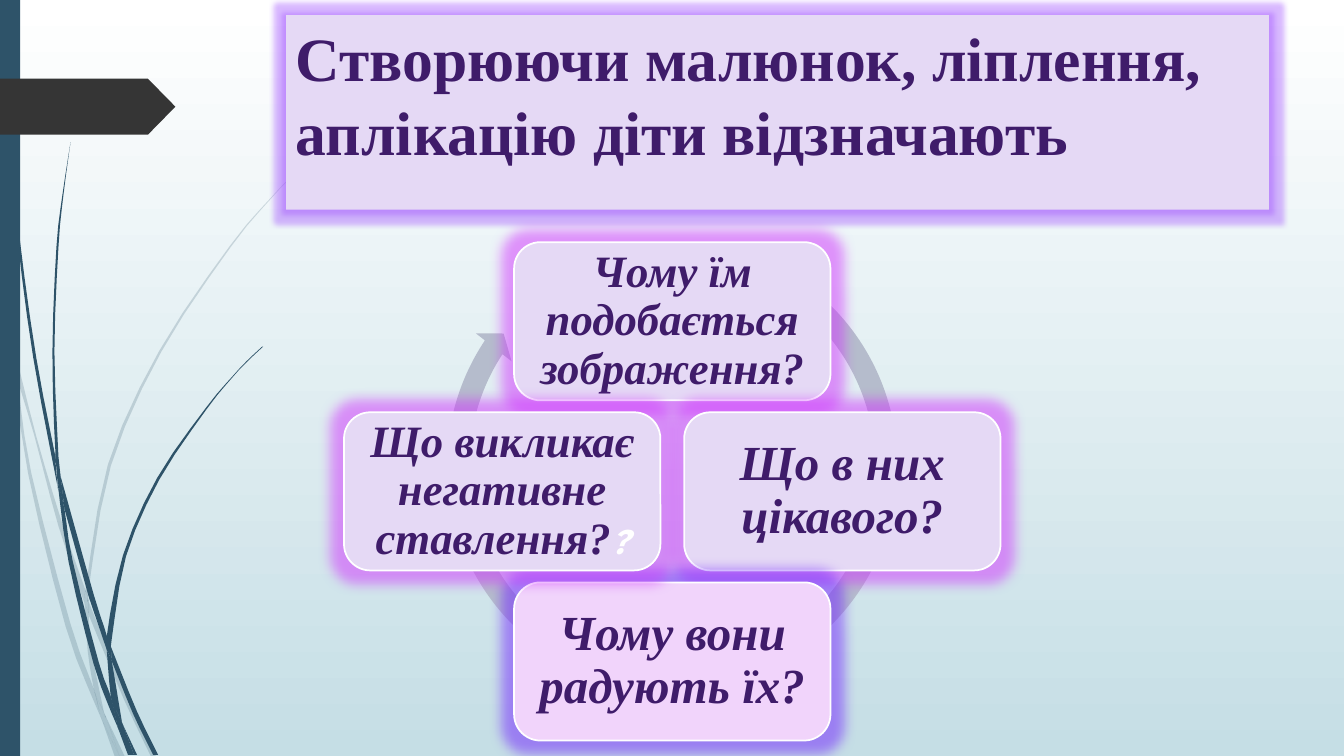
import pptx
import pptx.dml.color
import pptx.enum.shapes
import pptx.enum.text
import pptx.oxml.ns
import pptx.util
from lxml import etree

SHAPE = pptx.enum.shapes.MSO_SHAPE
Pt = pptx.util.Pt

TITLE = "Створюючи малюнок, ліплення, аплікацію діти відзначають"
FONT, INK, TEAL = "Times New Roman", "3F1C6A", "2E5369"
LILAC, PINK = "E5D9F5", "F1D4FB"

# text, size, inset, fill, glow, column and row offset from the cycle centre
QUESTIONS = [
    ("Чому їм подобається зображення?", 32, 9.6, LILAC, "D030FF", 0, -1),
    ("Що в них цікавого?", 35, 10.6, LILAC, "D030FF", 1, 0),
    ("Чому вони радують їх?", 35, 10.6, PINK, "7020FF", 0, 1),
    ("Що викликає негативне ставлення?", 32, 9.6, LILAC, "D030FF", -1, 0),
]
EXTRA_MARK = ("?", 26, "League Spartan", "FFFFFF")
CENTRE_X, CENTRE_Y, STEP = 480.2, 351, 121.5
BOX_W, BOX_H = 226, 113

# each part of a grass blade: one edge, then the other edge back
GRASS_UNIT = 0.72
FAINT_GRASS = [
    ([(0, 282), (9, 322), (11, 350)], [(10, 344), (0, 299)]),
    ([(14, 345), (36, 433), (62, 520), (85, 586)],
     [(84, 599), (58, 522), (34, 432), (17, 376)]),
    ([(88, 596), (92, 607), (127, 692), (155, 751)],
     [(150, 751), (123, 694), (88, 610)]),
    ([(105, 711), (124, 751)], [(119, 751), (105, 711)]),
    ([(11, 350), (17, 376), (31, 469), (70, 619), (93, 683), (99, 707), (101, 714)],
     [(92, 693), (65, 621), (28, 470), (11, 350)]),
    ([(84, 599), (88, 608), (88, 610), (91, 646), (103, 706), (105, 711)],
     [(96, 692), (93, 683), (87, 646), (84, 599)]),
    ([(88, 596), (88, 584), (110, 462), (160, 349), (229, 245), (268, 198),
      (290, 175), (312, 154)],
     [(312, 153), (289, 175), (268, 197), (228, 244), (158, 348), (107, 461),
      (85, 584), (85, 586)]),
    ([(101, 714), (114, 751)], [(119, 751), (101, 714)]),
    ([(85, 586), (88, 596), (88, 610)], [(88, 608), (84, 599)]),
    ([(93, 683), (96, 692), (105, 711), (119, 751)], [(101, 714), (99, 707)]),
]
DARK_GRASS = [
    ([(3, 0), (4, 48), (7, 110), (17, 233), (33, 355), (56, 477), (57, 481)],
     [(55, 457), (55, 453), (36, 355), (19, 232), (8, 109), (5, 48), (4, 0)]),
    ([(60, 472), (93, 590), (106, 631), (106, 645)], [(88, 592), (64, 505)]),
    ([(110, 641), (113, 649), (136, 706), (157, 749)],
     [(152, 749), (132, 708), (111, 656)]),
    ([(57, 477), (64, 505), (72, 556), (98, 657), (110, 691), (116, 717), (117, 722)],
     [(111, 708), (93, 659), (68, 557), (57, 477)]),
    ([(70, 141), (62, 193), (56, 245), (52, 349), (55, 449), (60, 472)],
     [(58, 453), (54, 349), (58, 245), (63, 193), (70, 141)]),
    ([(122, 719), (136, 749)], [(133, 749), (122, 719)]),
    ([(55, 449), (60, 472), (64, 505)], [(57, 477), (55, 453)]),
    ([(111, 633), (125, 552), (158, 476), (205, 406), (231, 374), (245, 359), (261, 344)],
     [(260, 344), (245, 358), (231, 373), (204, 405), (156, 474), (122, 551),
      (106, 631), (110, 641)]),
    ([(117, 722), (127, 749)], [(131, 749), (117, 722)]),
    ([(106, 645), (109, 651), (111, 656), (121, 716), (122, 719)],
     [(116, 706), (110, 691), (106, 645)]),
    ([(106, 631), (110, 641), (111, 656)], [(109, 651), (106, 645)]),
    ([(110, 691), (116, 706), (122, 719), (133, 749)], [(130, 749), (117, 722)]),
]


def rgb(color):
    return pptx.dml.color.RGBColor.from_string(color)


def add_xml(parent, tag, **attrs):
    return etree.SubElement(parent, pptx.oxml.ns.qn(tag), attrs)


def paint(sp, color, line=None):
    sp.shadow.inherit = False
    sp.fill.solid()
    sp.fill.fore_color.rgb = rgb(color)
    if line:
        sp.line.color.rgb = rgb(line)
        sp.line.width = Pt(1.25)
    else:
        sp.line.fill.background()


def add_shape(kind, x, y, w, h, color, line=None):
    sp = s.shapes.add_shape(kind, Pt(x), Pt(y), Pt(w), Pt(h))
    paint(sp, color, line)
    return sp


def add_glow(sp, color, radius, opacity):
    effects = sp._element.spPr.find(pptx.oxml.ns.qn("a:effectLst"))
    glow = add_xml(effects, "a:glow", rad=str(Pt(radius)))
    add_xml(add_xml(glow, "a:srgbClr", val=color), "a:alpha", val=str(opacity * 1000))


def smooth(points, steps=3):
    """Return points on a Catmull-Rom curve through the given ones."""
    if len(points) == 2:
        return points
    ends = [points[0], *points, points[-1]]
    curve = []
    for a, b, c, d in zip(ends, ends[1:], ends[2:], ends[3:]):
        for i in range(steps):
            t = i / steps
            curve.append(tuple(
                q + t / 2 * (r - p + t * (2 * p - 5 * q + 4 * r - u
                                          + t * (3 * (q - r) + u - p)))
                for p, q, r, u in zip(a, b, c, d)))
    return curve + [points[-1]]


def add_grass(edges, opacity):
    outline = [(Pt(x * GRASS_UNIT), Pt(y * GRASS_UNIT))
               for edge in edges for x, y in smooth(edge)]
    builder = s.shapes.build_freeform(*outline[0])
    builder.add_line_segments(outline[1:], close=True)
    sp = builder.convert_to_shape()
    paint(sp, TEAL)
    if opacity < 100:
        color = next(sp._element.spPr.iter(pptx.oxml.ns.qn("a:srgbClr")))
        add_xml(color, "a:alpha", val=str(opacity * 1000))


def set_font(font, size, name, color, italic):
    font.size, font.name, font.bold, font.italic = Pt(size), name, True, italic
    font.color.rgb = rgb(color)


def add_text(sp, text, size, align, anchor, italic):
    tf = sp.text_frame
    tf.word_wrap = True
    tf.vertical_anchor = anchor
    p = tf.paragraphs[0]
    p.alignment = align
    p.add_run().text = text
    set_font(p.font, size, FONT, INK, italic)
    return tf


prs = pptx.Presentation()
prs.slide_width, prs.slide_height = Pt(960), Pt(540)
s = prs.slides.add_slide(prs.slide_layouts[6])

background = s.background.fill
background.gradient()
background.gradient_angle = 270
for stop, color in zip(background.gradient_stops, ("FFFFFF", "C5DEE5")):
    stop.color.rgb = rgb(color)

for grass, opacity in ((FAINT_GRASS, 20), (DARK_GRASS, 100)):
    for edges in grass:
        add_grass(edges, opacity)
add_shape(SHAPE.RECTANGLE, 0, 0, 14.4, 540, TEAL)
pointer = add_shape(SHAPE.PENTAGON, 0, 56.2, 125.3, 40, "353535")
pointer.adjustments[0] = 0.49

title = add_shape(SHAPE.RECTANGLE, 204.3, 10.8, 702, 139, LILAC)
add_glow(title, "A050FF", 7, 40)
add_text(title, TITLE, 44, pptx.enum.text.PP_ALIGN.LEFT,
         pptx.enum.text.MSO_ANCHOR.TOP, False)

cycle = add_shape(SHAPE.CIRCULAR_ARROW, 311, 163.4, 338.4, 338.4, "B5BCCC")
for i, value in enumerate((0.047, 2.729, 128.117, 180.443, 0.048)):
    cycle.adjustments[i] = value

for text, size, inset, color, glow, col, row in QUESTIONS:
    box = add_shape(SHAPE.ROUNDED_RECTANGLE,
                    CENTRE_X + col * STEP - BOX_W / 2,
                    CENTRE_Y + row * STEP - BOX_H / 2,
                    BOX_W, BOX_H, color, "FFFFFF")
    add_glow(box, glow, 18, 50)
    tf = add_text(box, text, size, pptx.enum.text.PP_ALIGN.CENTER,
                  pptx.enum.text.MSO_ANCHOR.MIDDLE, True)
    tf.margin_left = tf.margin_right = tf.margin_top = tf.margin_bottom = Pt(inset)
    tf.paragraphs[0].line_spacing = 0.9

# the last question ends with a second, pale mark
mark, size, name, color = EXTRA_MARK
r = tf.paragraphs[0].add_run()
r.text = mark
set_font(r.font, size, name, color, True)

prs.save("out.pptx")
